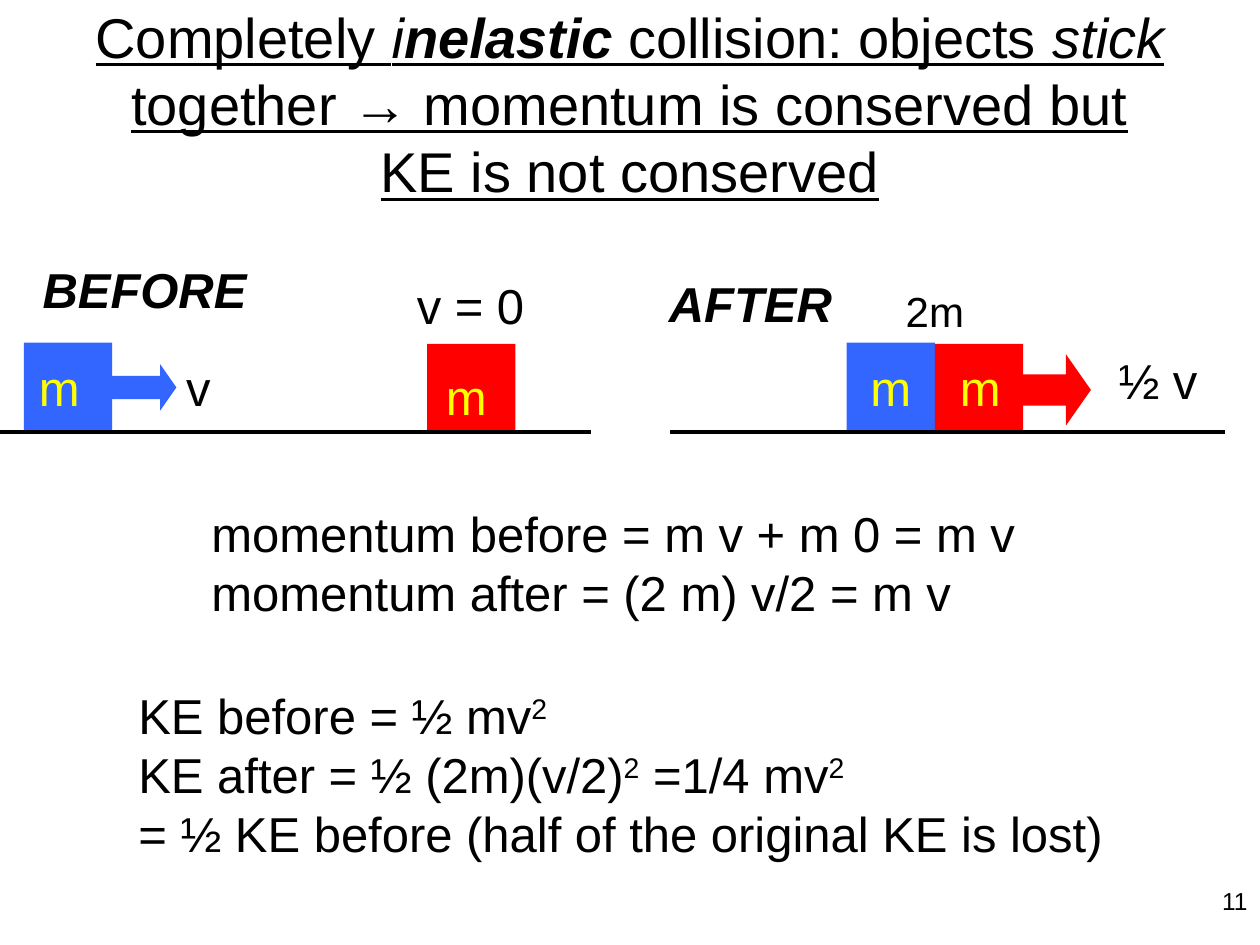
from dataclasses import dataclass
from typing import NamedTuple

from lxml import etree
from pptx import Presentation
from pptx.dml.color import RGBColor
from pptx.enum import shapes, text
from pptx.oxml.ns import qn
from pptx.util import Inches, Pt


@dataclass(frozen=True)
class Theme:
    font: str = "Arial"
    black: str = "000000"
    white: str = "FFFFFF"
    blue: str = "3366FF"
    red: str = "FF0000"
    yellow: str = "FFFF00"
    title: int = 32
    body: int = 28
    mass: int = 24
    page: int = 14
    ground: float = 2.25
    edge: float = 0.75
    bold: float = 4.5


T = Theme()
SIDE = 0.7
FLOOR = 3.43
ALIGN = text.PP_ALIGN


class Run(NamedTuple):
    words: str
    bold: bool = False
    italic: bool = False
    raised: bool = False


class Box(NamedTuple):
    left: float
    top: float
    width: float
    height: float


class Label(NamedTuple):
    box: Box
    words: str
    color: str = T.black
    size: int = T.body
    strong: bool = False


class Block(NamedTuple):
    left: float
    top: float
    color: str


class Arrow(NamedTuple):
    left: float
    top: float
    color: str
    edge: float = 0


class Ground(NamedTuple):
    start: float
    end: float


TITLE = [[Run("Completely "), Run("i", italic=True),
          Run("nelastic ", bold=True, italic=True),
          Run("collision: objects "), Run("stick", italic=True),
          Run(" together → momentum is conserved but\nKE is not conserved")]]
MOMENTUM = [[Run("momentum before = m v + m 0 = m v\n"
                 "momentum after = (2 m) v/2 = m v")]]
SQUARE = Run("2", raised=True)
ENERGY = [[Run("KE before = ½ mv"), SQUARE],
          [Run("KE after = ½ (2m)(v/2)"), SQUARE, Run(" =1/4 mv"), SQUARE],
          [Run("= ½ KE before (half of the original KE is lost)")]]

BLOCKS = [Block(0.19, 2.72, T.blue), Block(3.39, 2.73, T.red),
          Block(6.72, 2.72, T.blue), Block(7.42, 2.73, T.red)]
GROUNDS = [Ground(0, 4.69), Ground(5.32, 9.72)]
ARROWS = [Arrow(0.89, 2.89, T.blue), Arrow(8.11, 2.91, T.red, T.bold)]
MASSES = [Label(Box(left, top, 0.53, 0.57), "m", T.yellow)
          for left, top in ((0.21, 2.79), (3.44, 2.86), (6.81, 2.79), (7.52, 2.79))]
LABELS = MASSES + [
    Label(Box(0.24, 2.01, 1.84, 0.57), "BEFORE", strong=True),
    Label(Box(5.21, 2.12, 1.51, 0.57), "AFTER", strong=True),
    Label(Box(1.38, 2.79, 0.4, 0.57), "v"),
    Label(Box(3.21, 2.14, 1.06, 0.57), "v = 0"),
    Label(Box(8.78, 2.73, 0.83, 0.57), "½ v"),
    Label(Box(7.09, 2.22, 0.66, 0.5), "2m", size=T.mass),
]


def place(box: Box) -> list:
    return [Inches(n) for n in box]


def write(frame, paras: list, size: int, color: str = T.black,
          align=ALIGN.LEFT, under: bool = False) -> None:
    """Fill a text frame run by run; a newline in a run is a line break."""
    for i, runs in enumerate(paras):
        para = frame.paragraphs[0] if i == 0 else frame.add_paragraph()
        para.alignment = align
        for item in runs:
            for j, line in enumerate(item.words.split("\n")):
                if j:
                    para.add_line_break()
                run = para.add_run()
                run.text = line
                font = run.font
                font.name, font.size = T.font, Pt(size)
                font.bold, font.italic = item.bold, item.italic
                font.underline = under
                font.color.rgb = RGBColor.from_string(color)
                if item.raised:
                    run._r.get_or_add_rPr().set("baseline", "30000")


def add_text(slide, box: Box, paras: list, size: int, wrap: bool = True, **style):
    frame = slide.shapes.add_textbox(*place(box)).text_frame
    frame.word_wrap = wrap
    write(frame, paras, size, **style)
    return frame


def add_label(slide, label: Label) -> None:
    run = Run(label.words, label.strong, label.strong)
    add_text(slide, label.box, [[run]], label.size, wrap=False, color=label.color)


def add_form(slide, kind, box: Box, fill: str = "", line: str = "", width: float = 0):
    form = slide.shapes.add_shape(kind, *place(box))
    form.shadow.inherit = False
    if fill:
        form.fill.solid()
        form.fill.fore_color.rgb = RGBColor.from_string(fill)
    else:
        form.fill.background()
    if line:
        form.line.color.rgb = RGBColor.from_string(line)
        form.line.width = Pt(width)
    else:
        form.line.fill.background()
    return form


def add_block(slide, block: Block) -> None:
    add_form(slide, shapes.MSO_SHAPE.RECTANGLE,
             Box(block.left, block.top, SIDE, SIDE), block.color)


def add_arrow(slide, arrow: Arrow) -> None:
    form = add_form(slide, shapes.MSO_SHAPE.RIGHT_ARROW,
                    Box(arrow.left, arrow.top, 0.51, 0.37), arrow.color,
                    arrow.color if arrow.edge else "", arrow.edge)
    form.adjustments[0], form.adjustments[1] = 0.5, 0.35
    if arrow.edge:
        etree.SubElement(form.line._get_or_add_ln(), qn("a:miter"), lim="800000")


def add_ground(slide, ground: Ground) -> None:
    line = slide.shapes.add_connector(
        shapes.MSO_CONNECTOR.STRAIGHT, Inches(ground.start), Inches(FLOOR),
        Inches(ground.end), Inches(FLOOR))
    line.line.color.rgb = RGBColor.from_string(T.black)
    line.line.width = Pt(T.ground)
    etree.SubElement(line._element.spPr, qn("a:effectLst"))


def main() -> None:
    deck = Presentation()
    deck.slide_width, deck.slide_height = Inches(10), Inches(7.5)
    slide = deck.slides.add_slide(deck.slide_layouts[6])

    title = add_text(slide, Box(0, 0, 10, 1.64), TITLE, T.title,
                     align=ALIGN.CENTER, under=True)
    title.vertical_anchor = text.MSO_ANCHOR.MIDDLE
    for draw, items in ((add_block, BLOCKS), (add_ground, GROUNDS),
                        (add_arrow, ARROWS), (add_label, LABELS)):
        for item in items:
            draw(slide, item)

    panel = add_form(slide, shapes.MSO_SHAPE.RECTANGLE, Box(1.58, 3.95, 6.79, 1.04),
                     line=T.white, width=T.edge)
    panel.text_frame.vertical_anchor = text.MSO_ANCHOR.TOP
    write(panel.text_frame, MOMENTUM, T.body)
    add_text(slide, Box(1, 5.39, 7.99, 1.51), ENERGY, T.body)
    add_text(slide, Box(9.45, 6.98, 0.55, 0.52), [[Run("11")]], T.page,
             align=ALIGN.RIGHT)
    deck.save("out.pptx")


if __name__ == "__main__":
    main()
